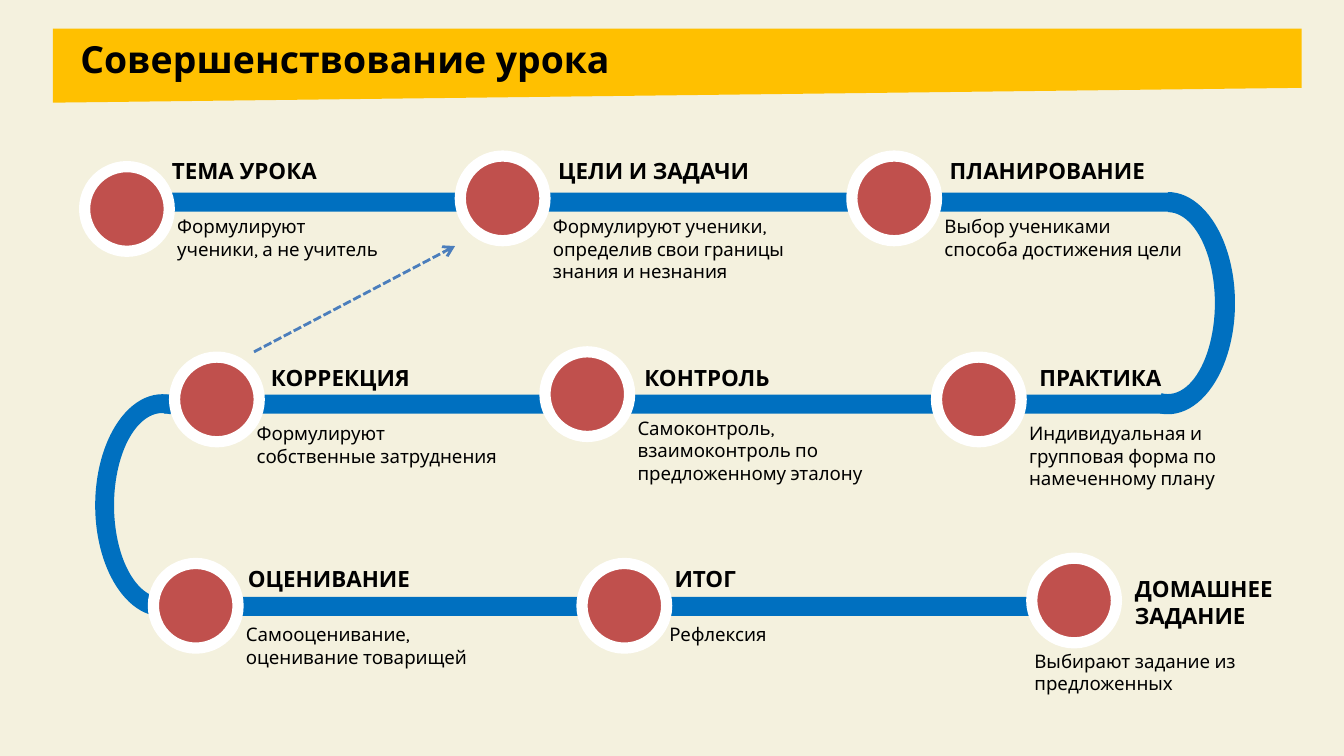
from dataclasses import dataclass

from lxml import etree
from pptx import Presentation
from pptx import util as u
from pptx.dml.color import RGBColor
from pptx.enum import dml, shapes, text
from pptx.oxml.ns import qn


@dataclass(frozen=True)
class Theme:
    font: str = "Karla"
    paper: str = "F4F1DE"
    banner: str = "FFC000"
    road: str = "0070C0"
    stop: str = "C0504D"
    rim: str = "FFFFFF"
    arrow: str = "4B7EBC"
    ink: str = "000000"
    title_size: int = 20
    heading_size: int = 12
    note_size: int = 10


class Board:
    """Draws on one slide; all lengths are cells of a square grid, 254 columns wide."""

    COLUMNS = 254

    def __init__(self, slide, slide_width, theme):
        self.slide, self.theme = slide, theme
        self.cell = slide_width / self.COLUMNS
        backdrop = slide.background.fill
        backdrop.solid()
        backdrop.fore_color.rgb = RGBColor.from_string(theme.paper)

    def cells(self, *counts):
        return [round(count * self.cell) for count in counts]

    def block(self, kind, box, color, rotation=0, adjustments=()):
        block = self.slide.shapes.add_shape(kind, *self.cells(*box))
        block.shadow.inherit = False
        block.rotation = rotation
        for i, value in enumerate(adjustments):
            block.adjustments[i] = value
        block.fill.solid()
        block.fill.fore_color.rgb = RGBColor.from_string(color)
        block.line.fill.background()
        return block

    def stop(self, left, top, size=16):
        circle = self.block(shapes.MSO_SHAPE.OVAL, (left, top, size, size), self.theme.stop)
        circle.line.color.rgb = RGBColor.from_string(self.theme.rim)
        circle.line.width = u.Pt(6)

    def label(self, words, box, size, bold=False, align=text.PP_ALIGN.LEFT, grow=True):
        frame = self.slide.shapes.add_textbox(*self.cells(*box)).text_frame
        frame.word_wrap = True
        if grow:
            frame.auto_size = text.MSO_AUTO_SIZE.SHAPE_TO_FIT_TEXT
        else:
            frame.vertical_anchor = text.MSO_ANCHOR.MIDDLE
        paragraph = frame.paragraphs[0]
        paragraph.text = words
        paragraph.alignment = align
        font = paragraph.font
        font.name, font.size, font.bold = self.theme.font, u.Pt(size), bold
        font.color.rgb = RGBColor.from_string(self.theme.ink)

    def dashed_arrow(self, start, end):
        arrow = self.slide.shapes.add_connector(
            shapes.MSO_CONNECTOR.STRAIGHT, *self.cells(*start, *end))
        arrow.line.color.rgb = RGBColor.from_string(self.theme.arrow)
        arrow.line.width = u.Pt(1.5)
        arrow.line.dash_style = dml.MSO_LINE.SQUARE_DOT
        etree.SubElement(arrow.line._get_or_add_ln(), qn("a:tailEnd"), type="arrow")
        etree.SubElement(arrow._element.spPr, qn("a:effectLst"))


LEFT, RIGHT = text.PP_ALIGN.LEFT, text.PP_ALIGN.RIGHT

# heading, its place and alignment, note, its place, width and height, place of the stop
STEPS = [
    ("ТЕМА УРОКА", (30, 28.5), LEFT,
     "Формулируют ученики, а не учитель", (31, 39.4, 43, 11.1), (16, 31.5)),
    ("ЦЕЛИ И ЗАДАЧИ", (103, 28.5), LEFT,
     "Формулируют ученики, определив свои границы знания и незнания",
     (102, 39.4, 51, 15.4), (87, 29.5)),
    ("ПЛАНИРОВАНИЕ", (177, 28.5), LEFT,
     "Выбор учениками способа достижения цели", (176, 39.4, 51, 11.1), (161, 29.5)),
    ("ПРАКТИКА", (180, 67.5), RIGHT,
     "Индивидуальная и групповая форма по намеченному плану",
     (192, 78.5, 51, 15.4), (177, 67.5)),
    ("КОНТРОЛЬ", (106, 67.5), RIGHT,
     "Самоконтроль, взаимоконтроль по предложенному эталону",
     (118, 77.5, 51, 15.4), (103, 66.5)),
    ("КОРРЕКЦИЯ", (38, 67.5), RIGHT,
     "Формулируют собственные затруднения", (46, 78.5, 51, 11.1), (33, 67.5)),
    ("ОЦЕНИВАНИЕ", (38, 105.5), RIGHT,
     "Самооценивание, оценивание товарищей", (44, 116.5, 51, 11.1), (29, 106.5)),
    ("ИТОГ", (125, 105.5), LEFT, "Рефлексия", (124, 116.5, 51, 6.9), (110, 106.5)),
    ("ДОМАШНЕЕ ЗАДАНИЕ", (212, 107.5), LEFT,
     "Выбирают задание из предложенных", (193, 121.5, 51, 11.1), (195, 105.5)),
]

ROAD_TOP, ROAD_PITCH, ROAD_WIDTH = 36.4, 38.2, 3.6
ROAD_SPANS = [(16, 205), (31, 190), (31, 180)]
BENDS = [(199.7, 90, (108, 2.47, 0.15)), (9.7, 270, (108, 3.03, 0.14))]


def main():
    theme = Theme()
    deck = Presentation()
    deck.slide_width = u.Inches(10)
    deck.slide_height = deck.slide_width * 9 // 16
    board = Board(deck.slides.add_slide(deck.slide_layouts[6]), deck.slide_width, theme)

    board.block(shapes.MSO_SHAPE.FLOWCHART_MANUAL_INPUT, (10, 5.4, 236, 14),
                theme.banner, rotation=180)
    board.label("Совершенствование урока", (12.7, 5.8, 135.4, 10.7),
                theme.title_size, bold=True, grow=False)

    for row, (left, length) in enumerate(ROAD_SPANS):
        board.block(shapes.MSO_SHAPE.RECTANGLE,
                    (left, ROAD_TOP + row * ROAD_PITCH, length, ROAD_WIDTH), theme.road)
    for row, (left, rotation, adjustments) in enumerate(BENDS):
        board.block(shapes.MSO_SHAPE.BLOCK_ARC,
                    (left, 44.6 + row * ROAD_PITCH, 42, 25.4),
                    theme.road, rotation, adjustments)

    for heading, heading_at, align, note, note_box, stop_at in STEPS:
        heading_height = 12.7 if " ЗАДАНИЕ" in heading else 7.6
        board.stop(*stop_at)
        board.label(heading, (*heading_at, 42, heading_height),
                    theme.heading_size, True, align)
        board.label(note, note_box, theme.note_size)
    board.dashed_arrow((48, 66.5), (86, 46.5))

    deck.save("out.pptx")


if __name__ == "__main__":
    main()
